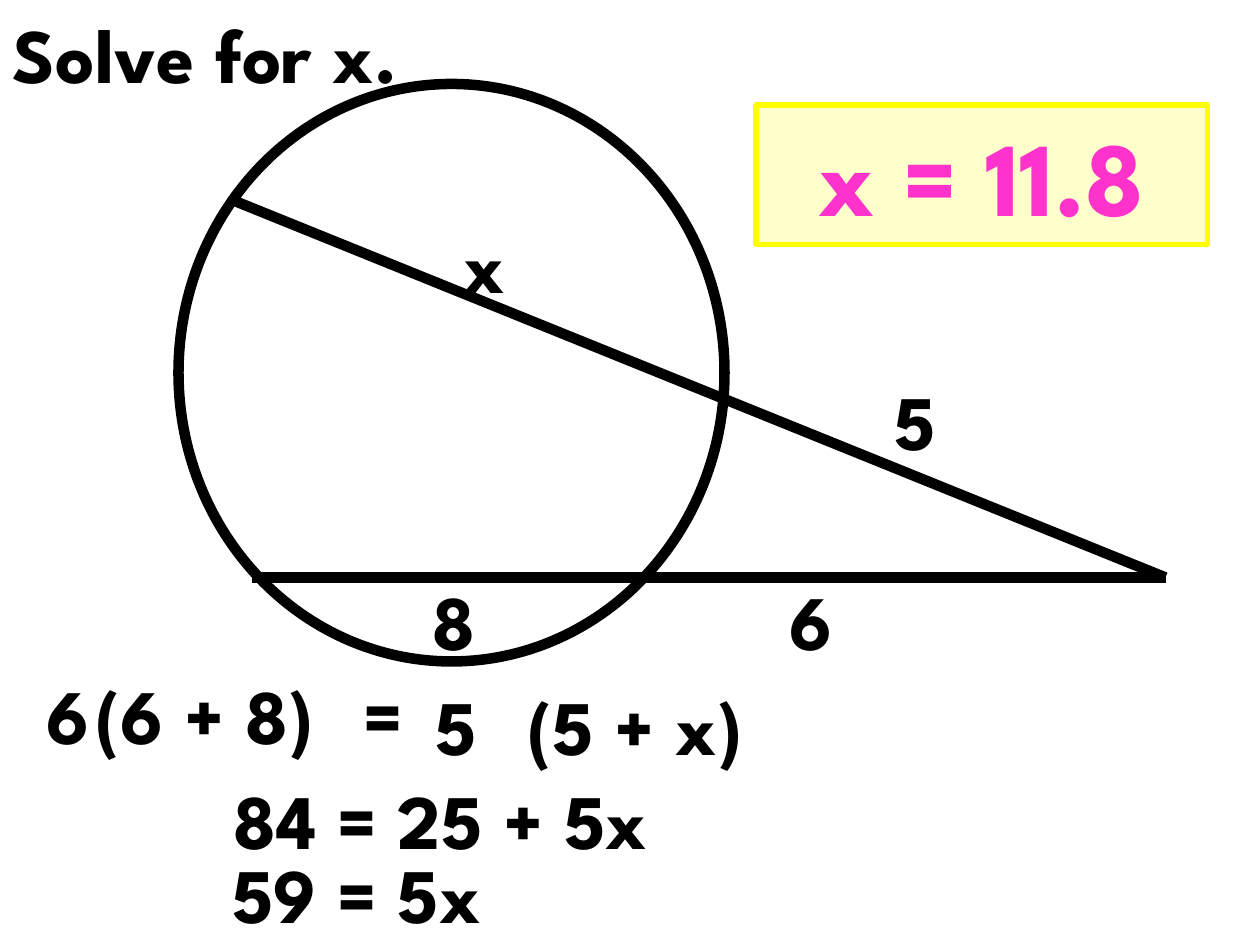
import pptx
import pptx.dml.color
import pptx.enum.shapes
import pptx.enum.text
import pptx.oxml
import pptx.util

BLACK = pptx.dml.color.RGBColor(0, 0, 0)
PALE_YELLOW = pptx.dml.color.RGBColor(0xFF, 0xFF, 0xCC)
YELLOW = pptx.dml.color.RGBColor(0xFF, 0xFF, 0)
PINK = pptx.dml.color.RGBColor(0xFF, 0x33, 0xCC)
FONT = "League Spartan"
COLUMNS, ROWS = 120, 90
CELL = pptx.util.Inches(10) // COLUMNS
LINE_ROWS = 10
LEFT = pptx.enum.text.PP_ALIGN.LEFT
CENTER = pptx.enum.text.PP_ALIGN.CENTER
TOP = pptx.enum.text.MSO_ANCHOR.TOP
BOTTOM = pptx.enum.text.MSO_ANCHOR.BOTTOM


def grid(*cells):
    """Convert grid columns and rows to slide lengths."""
    return [pptx.util.Emu(round(cell * CELL)) for cell in cells]


def write(holder, wording, align=CENTER, size=44, color=BLACK, anchor=TOP):
    """Put one bold line of text into a shape."""
    frame = holder.text_frame
    frame.text = wording
    frame.word_wrap = True
    frame.auto_size = pptx.enum.text.MSO_AUTO_SIZE.NONE
    frame.vertical_anchor = anchor
    line = frame.paragraphs[0]
    line.alignment = align
    font = line.runs[0].font
    font.name, font.size, font.bold = FONT, pptx.util.Pt(size), True
    font.color.rgb = color


def add_label(slide, wording, left, top, width, align=CENTER):
    """Add a one-line text box at a grid position."""
    label = slide.shapes.add_textbox(*grid(left, top, width, LINE_ROWS))
    write(label, wording, align)


def add_heading(slide, left, top, width):
    """Place the task in the title placeholder."""
    heading = slide.shapes.title
    heading.left, heading.top, heading.width, heading.height = grid(
        left, top, width, LINE_ROWS)
    write(heading, "Solve for x.", LEFT, anchor=BOTTOM)


def add_secant(slide, start, end):
    """Draw a thick black segment between two grid points."""
    secant = slide.shapes.add_connector(
        pptx.enum.shapes.MSO_CONNECTOR.STRAIGHT, *grid(*start, *end))
    secant.line.color.rgb = BLACK
    secant.line.width = pptx.util.Pt(6)
    secant._element.spPr.append(pptx.oxml.parse_xml(
        '<a:effectLst xmlns:a="http://schemas.openxmlformats.org/drawingml/2006/main"/>'))


def add_diagram(slide, left, top, width, height):
    """Draw the circle, its two secants and the segment lengths."""
    vertex = (left + 94, top + 47)
    add_secant(slide, vertex, (left + 5, top + 11))
    circle = slide.shapes.add_shape(
        pptx.enum.shapes.MSO_SHAPE.OVAL, *grid(left, top, width, height))
    circle.shadow.inherit = False
    circle.fill.background()
    circle.line.color.rgb = BLACK
    circle.line.width = pptx.util.Pt(6)
    add_secant(slide, (left + 7, top + 47), vertex)
    for wording, column, row in (
            ("8", 23, 46), ("5", 67, 27), ("6", 57, 46), ("x", 26, 12)):
        add_label(slide, wording, left + column, top + row, 12, LEFT)


def add_working(slide, left, top):
    """Write the equation and its simplification steps."""
    for wording, column, row, width in (
            ("6", 0, 0, 7), ("(6 + 8)", 3, 0, 27), ("=", 30, 0, 7),
            ("5", 37, 1, 7), ("(5 + x)", 41, 1, 33),
            ("84 = 25 + 5x", 14, 10, 50), ("59 = 5x", 12, 17, 38)):
        add_label(slide, wording, left + column, top + row, width)


def add_answer(slide, left, top, width, height):
    """Show the solution in a highlighted box."""
    answer = slide.shapes.add_shape(
        pptx.enum.shapes.MSO_SHAPE.RECTANGLE, *grid(left, top, width, height))
    answer.shadow.inherit = False
    answer.fill.solid()
    answer.fill.fore_color.rgb = PALE_YELLOW
    answer.line.color.rgb = YELLOW
    answer.line.width = pptx.util.Pt(3)
    write(answer, "x = 11.8", size=60, color=PINK)


def main():
    """Build the secant problem slide."""
    deck = pptx.Presentation()
    deck.slide_width, deck.slide_height = grid(COLUMNS, ROWS)
    slide = deck.slides.add_slide(deck.slide_layouts.get_by_name("Title Only"))
    add_diagram(slide, 17, 8, 52, 55)
    add_heading(slide, 0, 0, 98)
    add_working(slide, 3, 63)
    add_answer(slide, 72, 10, 43, 13.3)
    deck.save("out.pptx")


if __name__ == "__main__":
    main()
